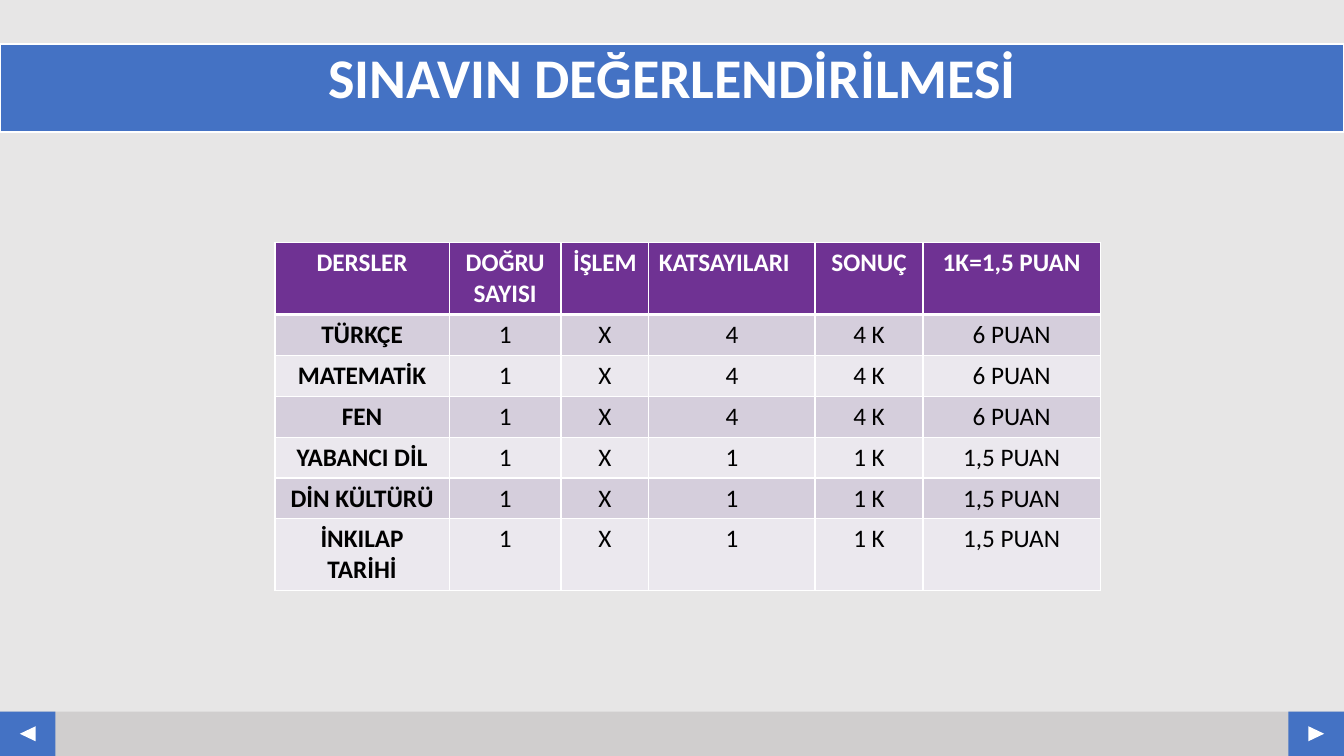
import pptx
import pptx.dml.color
import pptx.enum.shapes
import pptx.enum.text
import pptx.oxml
import pptx.oxml.ns
import pptx.util

Cm, Pt = pptx.util.Cm, pptx.util.Pt
SHAPE = pptx.enum.shapes.MSO_SHAPE
ALIGN = pptx.enum.text.PP_ALIGN

WIDTH, HEIGHT = 33.87, 19.05
BLUE, WHITE, BLACK = "4472C4", "FFFFFF", "000000"
PURPLE, BANDS = "6F3293", ("D5CEDC", "EBE8EE")

HEADINGS = ["DERSLER", "DOĞRU SAYISI", "İŞLEM", "KATSAYILARI", "SONUÇ", "1K=1,5 PUAN"]
# Each lesson with its coefficient and points
LESSONS = [
    ("TÜRKÇE", 4, "6"),
    ("MATEMATİK", 4, "6"),
    ("FEN", 4, "6"),
    ("YABANCI DİL", 1, "1,5"),
    ("DİN KÜLTÜRÜ", 1, "1,5"),
    ("İNKILAP TARİHİ", 1, "1,5"),
]
COLUMN_WIDTHS = [4.39, 2.82, 2.21, 4.19, 2.72, 4.47]
ROW_HEIGHTS = [1.8] + [1.03] * 5 + [1.8]


def paint(fill, color):
    fill.solid()
    fill.fore_color.rgb = pptx.dml.color.RGBColor.from_string(color)


def write(frame, text, size=18, color=BLACK, bold=False, align=ALIGN.CENTER, spacing=1.0):
    para = frame.paragraphs[0]
    para.alignment = align
    para.line_spacing = spacing
    span = para.add_run()
    span.text = text
    span.font.name = "Calibri"
    span.font.size = Pt(size)
    span.font.bold = bold
    paint(span.font.fill, color)


def add_block(page, kind, left, top, width, height, color, rotation=0):
    block = page.shapes.add_shape(kind, Cm(left), Cm(top), Cm(width), Cm(height))
    block.shadow.inherit = False
    block.rotation = rotation
    paint(block.fill, color)
    block.line.fill.background()


def add_border(cell, side, points):
    properties = cell._tc.get_or_add_tcPr()
    properties.append(pptx.oxml.parse_xml(
        f'<a:{side} {pptx.oxml.ns.nsdecls("a")} w="{Pt(points)}">'
        f'<a:solidFill><a:srgbClr val="{WHITE}"/></a:solidFill></a:{side}>'))


def add_navigation(page):
    top, height, button = 17.93, 1.12, 1.4
    add_block(page, SHAPE.RECTANGLE, 0, top, WIDTH, height, "D0CECE")
    for left, rotation in ((0, 270), (WIDTH - button, 90)):
        add_block(page, SHAPE.RECTANGLE, left, top, button, height, BLUE)
        add_block(page, SHAPE.ISOSCELES_TRIANGLE, left + 0.51, top + 0.36,
                  0.38, 0.4, WHITE, rotation)


def format_title(page, text):
    title = page.shapes.title
    title.left, title.top = Cm(0), Cm(1.12)
    title.width, title.height = Cm(WIDTH), Cm(2.21)
    paint(title.fill, BLUE)
    paint(title.line.fill, WHITE)
    title.line.width = Pt(1.5)
    frame = title.text_frame
    frame.auto_size = pptx.enum.text.MSO_AUTO_SIZE.NONE
    frame.vertical_anchor = pptx.enum.text.MSO_ANCHOR.TOP
    frame.margin_top = Cm(0.15)
    write(frame, text, size=40, color=WHITE, bold=True, spacing=0.9)


def add_score_table(page):
    rows = [HEADINGS] + [
        [lesson, "1", "X", str(factor), f"{factor} K", f"{points} PUAN"]
        for lesson, factor, points in LESSONS]
    table = page.shapes.add_table(
        len(rows), len(HEADINGS), Cm(6.93), Cm(6.12),
        Cm(sum(COLUMN_WIDTHS)), Cm(sum(ROW_HEIGHTS))).table
    for column, width in zip(table.columns, COLUMN_WIDTHS):
        column.width = Cm(width)
    for row, height in zip(table.rows, ROW_HEIGHTS):
        row.height = Cm(height)
    for r, texts in enumerate(rows):
        header = r == 0
        for c, text in enumerate(texts):
            cell = table.cell(r, c)
            # Thick rule under the header, thin ones elsewhere
            for side in ("lnL", "lnR", "lnT", "lnB"):
                thick = (r, side) in ((0, "lnB"), (1, "lnT"))
                add_border(cell, side, 3 if thick else 1)
            paint(cell.fill, PURPLE if header else BANDS[(r - 1) % 2])
            write(cell.text_frame, text, color=WHITE if header else BLACK,
                  bold=header or c == 0,
                  align=ALIGN.LEFT if text == "KATSAYILARI" else ALIGN.CENTER)


def main():
    deck = pptx.Presentation()
    deck.slide_width, deck.slide_height = Cm(WIDTH), Cm(HEIGHT)
    page = deck.slides.add_slide(deck.slide_layouts[5])
    paint(page.background.fill, "E7E6E6")
    add_navigation(page)
    format_title(page, "SINAVIN DEĞERLENDİRİLMESİ")
    add_score_table(page)
    deck.save("out.pptx")


if __name__ == "__main__":
    main()
